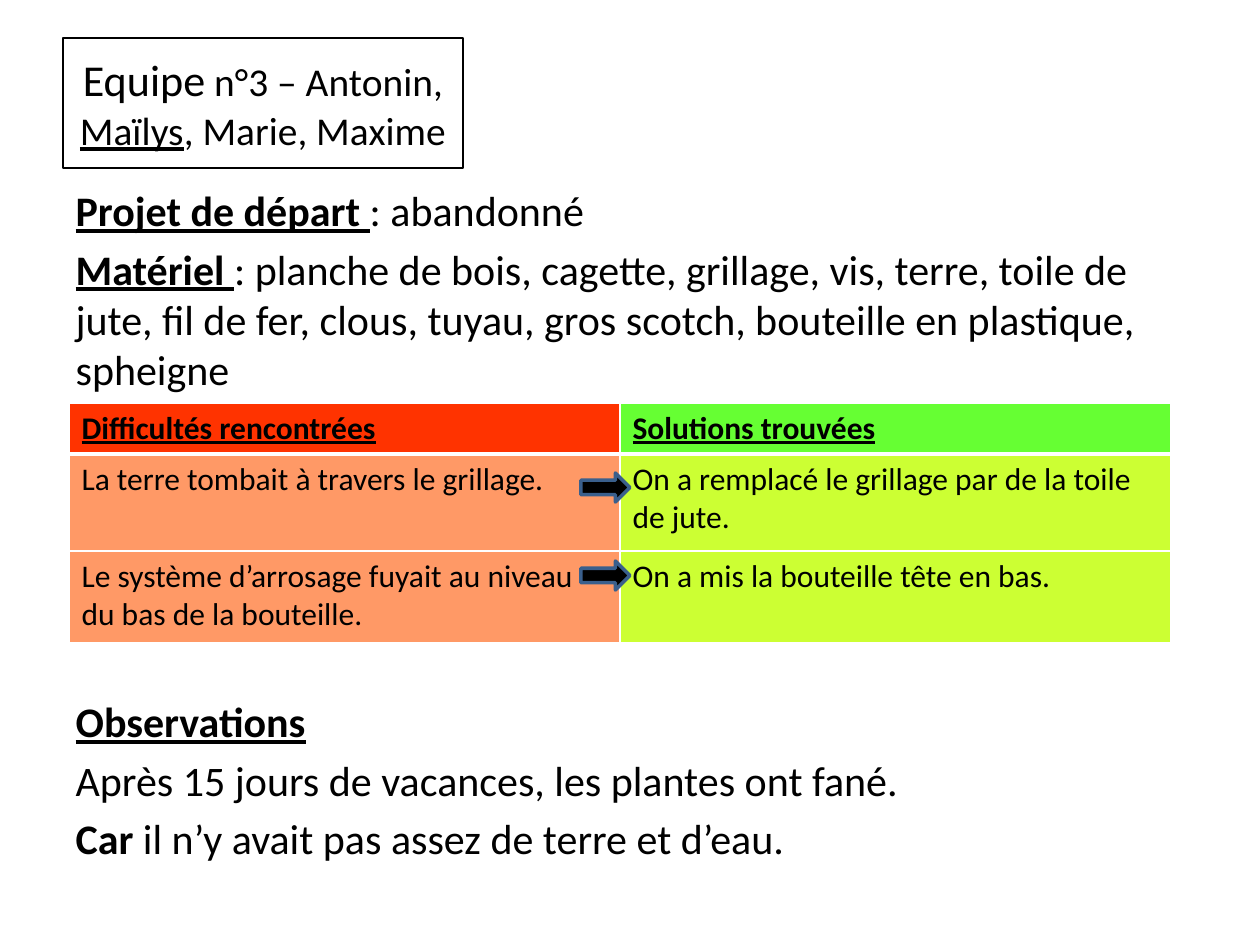
from typing import NamedTuple

from lxml.etree import SubElement
from pptx import Presentation
from pptx.dml.color import RGBColor
from pptx.enum.shapes import MSO_SHAPE
from pptx.enum.text import MSO_ANCHOR, MSO_AUTO_SIZE, PP_ALIGN
from pptx.oxml import parse_xml
from pptx.oxml.ns import nsdecls, qn
from pptx.util import Emu, Pt

EMU_PER_PX = 914400 / 126
BLACK = "000000"
WHITE = "FFFFFF"


class Box(NamedTuple):
    left: int
    top: int
    width: int
    height: int


class Span(NamedTuple):
    text: str
    size: float = 24
    bold: bool = False
    underline: bool = False


class Line(NamedTuple):
    spans: list[Span]
    before: float = 4.8


class Column(NamedTuple):
    heading: str
    entries: list[str]
    heading_fill: str
    entry_fill: str


TEAM = [
    Span("Equipe", 25.2),
    Span(" n°3 – Antonin, ", 22.5),
    Span("Maïlys", 22.5, underline=True),
    Span(", Marie, Maxime", 22.5),
]
# The space before "Observations" leaves room for the table
REPORT = [
    Line([Span("Projet de départ ", bold=True, underline=True), Span(": abandonné")]),
    Line([
        Span("Matériel ", bold=True, underline=True),
        Span(": planche de bois, cagette, grillage, vis, terre, toile de jute, fil de fer, "
             "clous, tuyau, gros scotch, bouteille en plastique, spheigne"),
    ]),
    Line([Span("Observations", bold=True, underline=True)], before=172),
    Line([Span("Après 15 jours de vacances, les plantes ont fané.")]),
    Line([Span("Car", bold=True), Span(" il n’y avait pas assez de terre et d’eau.")]),
]
COLUMNS = [
    Column("Difficultés rencontrées",
           ["La terre tombait à travers le grillage.",
            "Le système d’arrosage fuyait au niveau du bas de la bouteille."],
           "FF3300", "FF9966"),
    Column("Solutions trouvées",
           ["On a remplacé le grillage par de la toile de jute.",
            "On a mis la bouteille tête en bas."],
           "66FF33", "CCFF33"),
]
ROW_HEIGHTS = [48, 97, 92]
ARROWS = [Box(581, top, 49, 29) for top in (473, 561)]


def px(length: int) -> Emu:
    return Emu(round(length * EMU_PER_PX))


def color(hex_code: str) -> RGBColor:
    return RGBColor.from_string(hex_code)


def place(shape, box: Box) -> None:
    shape.left, shape.top, shape.width, shape.height = map(px, box)


def outline(shape, hex_code: str, width: float) -> None:
    shape.line.color.rgb = color(hex_code)
    shape.line.width = Pt(width)


def write(paragraph, text: str, *, size: float, bold: bool = False,
          underline: bool = False) -> None:
    run = paragraph.add_run()
    run.text = text
    font = run.font
    font.name, font.size = "Calibri", Pt(size)
    font.bold, font.underline = bold, underline
    font.color.rgb = color(BLACK)


def write_spans(paragraph, spans: list[Span]) -> None:
    for span in spans:
        write(paragraph, span.text, size=span.size, bold=span.bold, underline=span.underline)


def remove_bullet(paragraph) -> None:
    properties = paragraph._p.get_or_add_pPr()
    properties.set("marL", "0")
    properties.set("indent", "0")
    SubElement(properties, qn("a:buNone"))


def set_borders(cell, top: float, bottom: float) -> None:
    widths = {"lnL": 1, "lnR": 1, "lnT": top, "lnB": bottom}
    for position, (side, width) in enumerate(widths.items()):
        cell._tc.get_or_add_tcPr().insert(position, parse_xml(
            f'<a:{side} {nsdecls("a")} w="{Pt(width)}"><a:solidFill>'
            f'<a:srgbClr val="{WHITE}"/></a:solidFill></a:{side}>'))


def draw_title(title) -> None:
    place(title, Box(63, 38, 400, 130))
    outline(title, BLACK, 0.75)
    frame = title.text_frame
    frame.auto_size = MSO_AUTO_SIZE.NONE
    frame.vertical_anchor = MSO_ANCHOR.MIDDLE
    frame.paragraphs[0].alignment = PP_ALIGN.CENTER
    write_spans(frame.paragraphs[0], TEAM)


def draw_report(body) -> None:
    place(body, Box(63, 178, 1134, 667))
    frame = body.text_frame
    frame.auto_size = MSO_AUTO_SIZE.NONE
    for index, line in enumerate(REPORT):
        paragraph = frame.add_paragraph() if index else frame.paragraphs[0]
        paragraph.space_before = Pt(line.before)
        remove_bullet(paragraph)
        write_spans(paragraph, line.spans)


def draw_table(slide, box: Box) -> None:
    table = slide.shapes.add_table(len(ROW_HEIGHTS), len(COLUMNS), *map(px, box)).table
    for row, height in zip(table.rows, ROW_HEIGHTS):
        row.height = px(height)
    for x, column in enumerate(COLUMNS):
        for y, text in enumerate([column.heading, *column.entries]):
            cell = table.cell(y, x)
            heading = y == 0
            cell.fill.solid()
            cell.fill.fore_color.rgb = color(
                column.heading_fill if heading else column.entry_fill)
            set_borders(cell, top=3 if y == 1 else 1, bottom=3 if heading else 1)
            write(cell.text_frame.paragraphs[0], text, size=18,
                  bold=heading, underline=heading)


def draw_arrow(slide, box: Box) -> None:
    arrow = slide.shapes.add_shape(MSO_SHAPE.RIGHT_ARROW, *map(px, box))
    arrow.shadow.inherit = False
    arrow.fill.solid()
    arrow.fill.fore_color.rgb = color(BLACK)
    outline(arrow, "3A5F8C", 2)


def main() -> None:
    deck = Presentation()
    deck.slide_width, deck.slide_height = px(1260), px(945)
    slide = deck.slides.add_slide(deck.slide_layouts[1])
    slide.background.fill.solid()
    slide.background.fill.fore_color.rgb = color(WHITE)

    # Team and report
    draw_title(slide.shapes.title)
    draw_report(slide.placeholders[1])

    # Difficulties, each with an arrow to its solution
    draw_table(slide, Box(69, 403, 1102, sum(ROW_HEIGHTS)))
    for arrow in ARROWS:
        draw_arrow(slide, arrow)

    deck.save("out.pptx")


if __name__ == "__main__":
    main()
